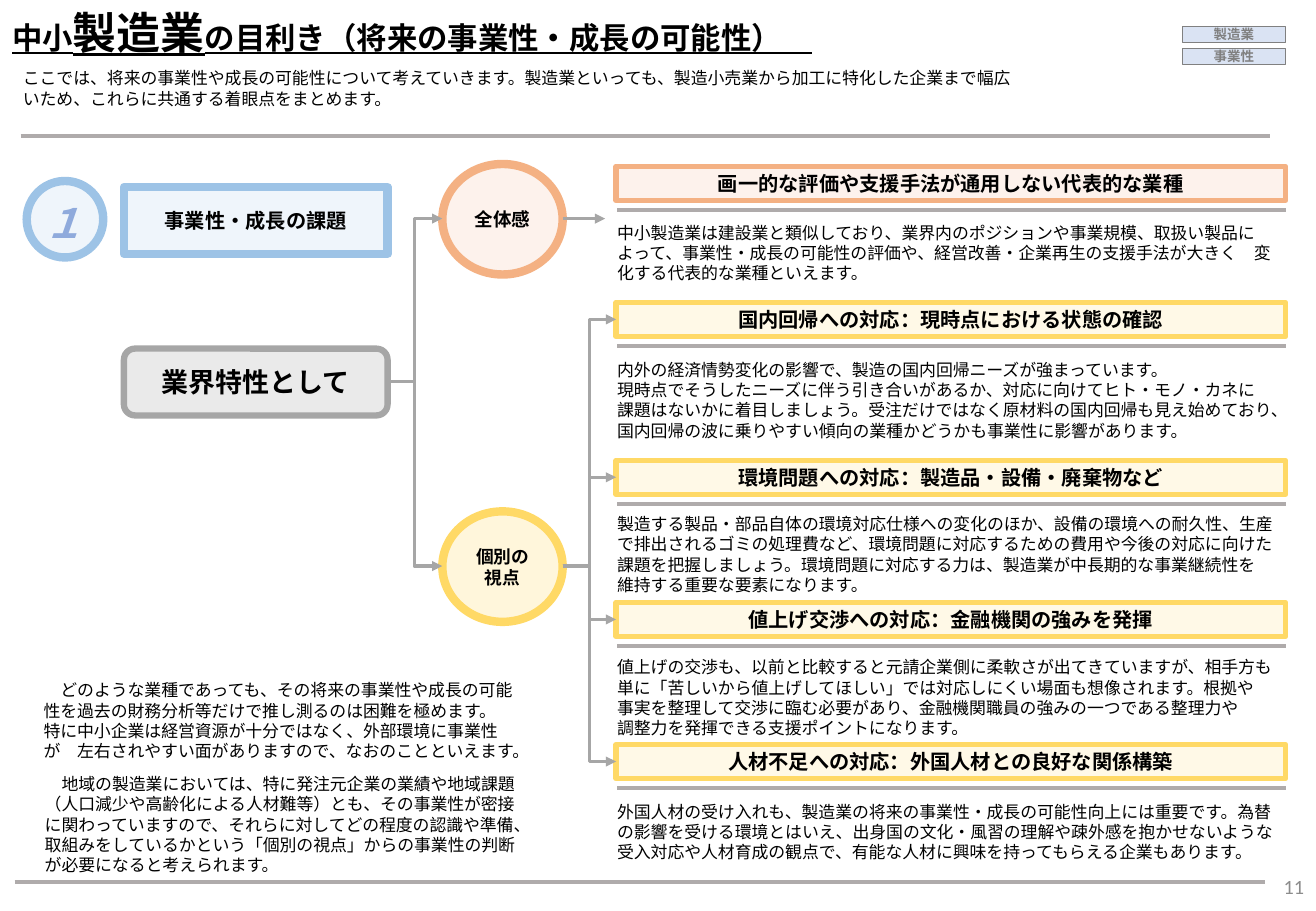
import pptx
import pptx.dml.color
import pptx.enum.shapes
import pptx.enum.text
import pptx.oxml.ns
import pptx.util
from lxml import etree

PX = 9144  # EMU in one px, 100 px to the inch
SHAPE = pptx.enum.shapes.MSO_SHAPE
CONNECTOR = pptx.enum.shapes.MSO_CONNECTOR
ALIGN = pptx.enum.text.PP_ALIGN
ANCHOR = pptx.enum.text.MSO_ANCHOR
rgb = pptx.dml.color.RGBColor.from_string
qn = pptx.oxml.ns.qn


class Theme:
    heading_font, text_font = "Arial", "Calibri"
    ink, page_ink, number_ink, tag_ink = "000000", "8C8C8C", "8FAADC", "808080"
    rule, arrow, tag_fill = "AFABAB", "A6A6A6", "DAE3F3"
    # Fill and outline of each group of panels
    grey = ("A6A6A6", "A6A6A6")
    blue = ("BDD7EE", "9DC3E6")
    orange = ("F8CBAD", "F4B183")
    yellow = ("FFE699", "FFD966")
    gold = ("FFD966", "FFD966")
    tint = "23000"  # opacity of panel fills, in thousandths of a percent
    title, title_big, number, trait = 18, 26, 24, 16
    heading, overall, specific, body, tag = 12, 11, 10.5, 10, 8


prs = pptx.Presentation()
prs.slide_width, prs.slide_height = 1083 * PX, 750 * PX
slide = prs.slides.add_slide(prs.slide_layouts[5])


def add_block(kind, box, text, size, fill=None, outline=None, weight=0, tinted=True,
              ink=Theme.ink, font=Theme.text_font, bold=False, italic=False,
              align=ALIGN.LEFT, anchor=ANCHOR.TOP, inset=None, indent=0):
    """Add a preset shape, or a text box when kind is None, with its text."""
    frame_box = [PX * v for v in box]
    if kind is None:
        block = slide.shapes.add_textbox(*frame_box)
    else:
        block = slide.shapes.add_shape(kind, *frame_box)
        block.shadow.inherit = False
        block.fill.solid()
        block.fill.fore_color.rgb = rgb(fill)
        if tinted:
            color = block.fill._xPr.find(".//" + qn("a:srgbClr"))
            etree.SubElement(color, qn("a:alpha"), val=Theme.tint)
        block.line.color.rgb = rgb(outline)
        block.line.width = pptx.util.Pt(weight)
    frame = block.text_frame
    frame.word_wrap = True
    frame.vertical_anchor = anchor
    if inset is not None:
        frame.margin_left = frame.margin_right = inset
        frame.margin_top = frame.margin_bottom = inset
    frame.text = text
    for paragraph in frame.paragraphs:
        paragraph.alignment = align
        if indent:
            paragraph._p.get_or_add_pPr().set("indent", str(pptx.util.Pt(indent)))
        for run in paragraph.runs:
            run.font.name, run.font.size = font, pptx.util.Pt(size)
            run.font.bold, run.font.italic = bold, italic
            run.font.color.rgb = rgb(ink)
            etree.SubElement(run.font._element, qn("a:ea"), typeface=font)


def add_line(start, end, color, weight, kind=CONNECTOR.STRAIGHT, arrow=False):
    line = slide.shapes.add_connector(kind, *(PX * v for v in (*start, *end)))
    line.line.color.rgb = rgb(color)
    line.line.width = pptx.util.Pt(weight)
    if arrow:
        etree.SubElement(line.line._get_or_add_ln(), qn("a:tailEnd"), type="triangle")
    etree.SubElement(line._element.spPr, qn("a:effectLst"))


# Title and introduction
title = slide.shapes.title
title.left, title.top, title.width, title.height = 0, 0, 705 * PX, 54 * PX
title.text_frame.word_wrap = True
title.text_frame.auto_size = pptx.enum.text.MSO_AUTO_SIZE.NONE
title.text_frame.vertical_anchor = ANCHOR.TOP
title_line = title.text_frame.paragraphs[0]
title_line.alignment = ALIGN.LEFT
for words, size in (("中小", Theme.title), ("製造業", Theme.title_big),
                    ("の目利き（将来の事業性・成長の可能性）　", Theme.title)):
    run = title_line.add_run()
    run.text = words
    run.font.name, run.font.size = Theme.heading_font, pptx.util.Pt(size)
    run.font.bold = run.font.underline = True
    run.font.color.rgb = rgb(Theme.ink)
    etree.SubElement(run.font._element, qn("a:ea"), typeface=Theme.heading_font)

add_block(None, (9, 51, 837, 44),
          "ここでは、将来の事業性や成長の可能性について考えていきます。製造業といっても、"
          "製造小売業から加工に特化した企業まで幅広いため、これらに共通する着眼点をまとめます。",
          Theme.body)
for start, end in (((17, 112), (1045, 112)), ((12, 726), (1041, 726))):
    add_line(start, end, Theme.rule, 2.25)

centred = dict(bold=True, align=ALIGN.CENTER, anchor=ANCHOR.MIDDLE)
for top, tag in ((22, "製造業"), (40, "事業性")):
    add_block(SHAPE.RECTANGLE, (973, top, 85, 13), tag, Theme.tag, Theme.tag_fill,
              Theme.tag_ink, 0.75, tinted=False, ink=Theme.tag_ink, inset=0, **centred)

# Theme number, topic and the branches that follow from it
add_block(SHAPE.OVAL, (22, 149, 63, 63), "", Theme.number, *Theme.blue, 5)
add_block(None, (26, 158, 49, 50), "１", Theme.number, ink=Theme.number_ink,
          font=Theme.heading_font, bold=True, italic=True, align=ALIGN.CENTER)
for kind, box, text, size, colors, weight in (
    (SHAPE.RECTANGLE, (102, 154, 217, 55), "事業性・成長の課題", Theme.heading, Theme.blue, 5),
    (SHAPE.ROUNDED_RECTANGLE, (102, 287, 217, 55), "業界特性として", Theme.trait, Theme.grey, 3.75),
    (SHAPE.OVAL, (364, 135, 99, 91), "全体感", Theme.overall, Theme.orange, 5),
    (SHAPE.OVAL, (364, 421, 99, 91), "個別の\n視点", Theme.specific, Theme.gold, 5),
):
    add_block(kind, box, text, size, *colors, weight, **centred)

# Viewpoints: heading top, body top, colours, heading, body
viewpoints = (
    (137, 178, Theme.orange, "画一的な評価や支援手法が通用しない代表的な業種",
     "中小製造業は建設業と類似しており、業界内のポジションや事業規模、取扱い製品によって、"
     "事業性・成長の可能性の評価や、経営改善・企業再生の支援手法が大きく　変化する代表的な業種といえます。"),
    (249, 291, Theme.yellow, "国内回帰への対応：現時点における状態の確認",
     "内外の経済情勢変化の影響で、製造の国内回帰ニーズが強まっています。\n"
     "現時点でそうしたニーズに伴う引き合いがあるか、対応に向けてヒト・モノ・カネに　課題はないかに"
     "着目しましょう。受注だけではなく原材料の国内回帰も見え始めており、国内回帰の波に乗りやすい"
     "傾向の業種かどうかも事業性に影響があります。"),
    (379, 418, Theme.yellow, "環境問題への対応：製造品・設備・廃棄物など",
     "製造する製品・部品自体の環境対応仕様への変化のほか、設備の環境への耐久性、生産で排出される"
     "ゴミの処理費など、環境問題に対応するための費用や今後の対応に向けた課題を把握しましょう。"
     "環境問題に対応する力は、製造業が中長期的な事業継続性を\v維持する重要な要素になります。"),
    (496, 536, Theme.yellow, "値上げ交渉への対応：金融機関の強みを発揮",
     "値上げの交渉も、以前と比較すると元請企業側に柔軟さが出てきていますが、相手方も単に"
     "「苦しいから値上げしてほしい」では対応しにくい場面も想像されます。根拠や\v"
     "事実を整理して交渉に臨む必要があり、金融機関職員の強みの一つである整理力や\v"
     "調整力を発揮できる支援ポイントになります。"),
    (613, 655, Theme.yellow, "人材不足への対応：外国人材との良好な関係構築",
     "外国人材の受け入れも、製造業の将来の事業性・成長の可能性向上には重要です。為替の影響を"
     "受ける環境とはいえ、出身国の文化・風習の理解や疎外感を抱かせないような受入対応や人材育成の"
     "観点で、有能な人材に興味を持ってもらえる企業もあります。"),
)
for top, body_top, colors, heading, body in viewpoints:
    add_block(SHAPE.RECTANGLE, (507, top, 551, 28), heading, Theme.heading,
              *colors, 3.25, **centred)
    add_line((508, top + 36), (1058, top + 36), Theme.rule, 2.25)
    add_block(None, (498, body_top, 566, 77), body, Theme.body)

# Arrows: topic to both branches, branches to their viewpoints
add_line((463, 180), (498, 180), Theme.arrow, 2, arrow=True)
elbows = [((318, 314), (364, 180)), ((318, 314), (364, 466))]
elbows += [((463, 466), (507, viewpoint[0] + 14)) for viewpoint in viewpoints[1:]]
for start, end in elbows:
    add_line(start, end, Theme.arrow, 2, CONNECTOR.ELBOW, arrow=True)

# Remarks at the lower left and the page number
for box, remark in (
    ((26, 555, 409, 77),
     "どのような業種であっても、その将来の事業性や成長の可能性を過去の財務分析等だけで推し測るのは"
     "困難を極めます。\v特に中小企業は経営資源が十分ではなく、外部環境に事業性が　左右されやすい面が"
     "ありますので、なおのことといえます。"),
    ((27, 632, 414, 94),
     "地域の製造業においては、特に発注元企業の業績や地域課題（人口減少や高齢化による人材難等）とも、"
     "その事業性が密接に関わっていますので、それらに対してどの程度の認識や準備、取組みをしているか"
     "という「個別の視点」からの事業性の判断が必要になると考えられます。"),
):
    add_block(None, box, remark, Theme.body, indent=Theme.body)
add_block(None, (1030, 710, 53, 40), "11", Theme.heading, ink=Theme.page_ink,
          align=ALIGN.RIGHT, anchor=ANCHOR.MIDDLE)

prs.save("out.pptx")
